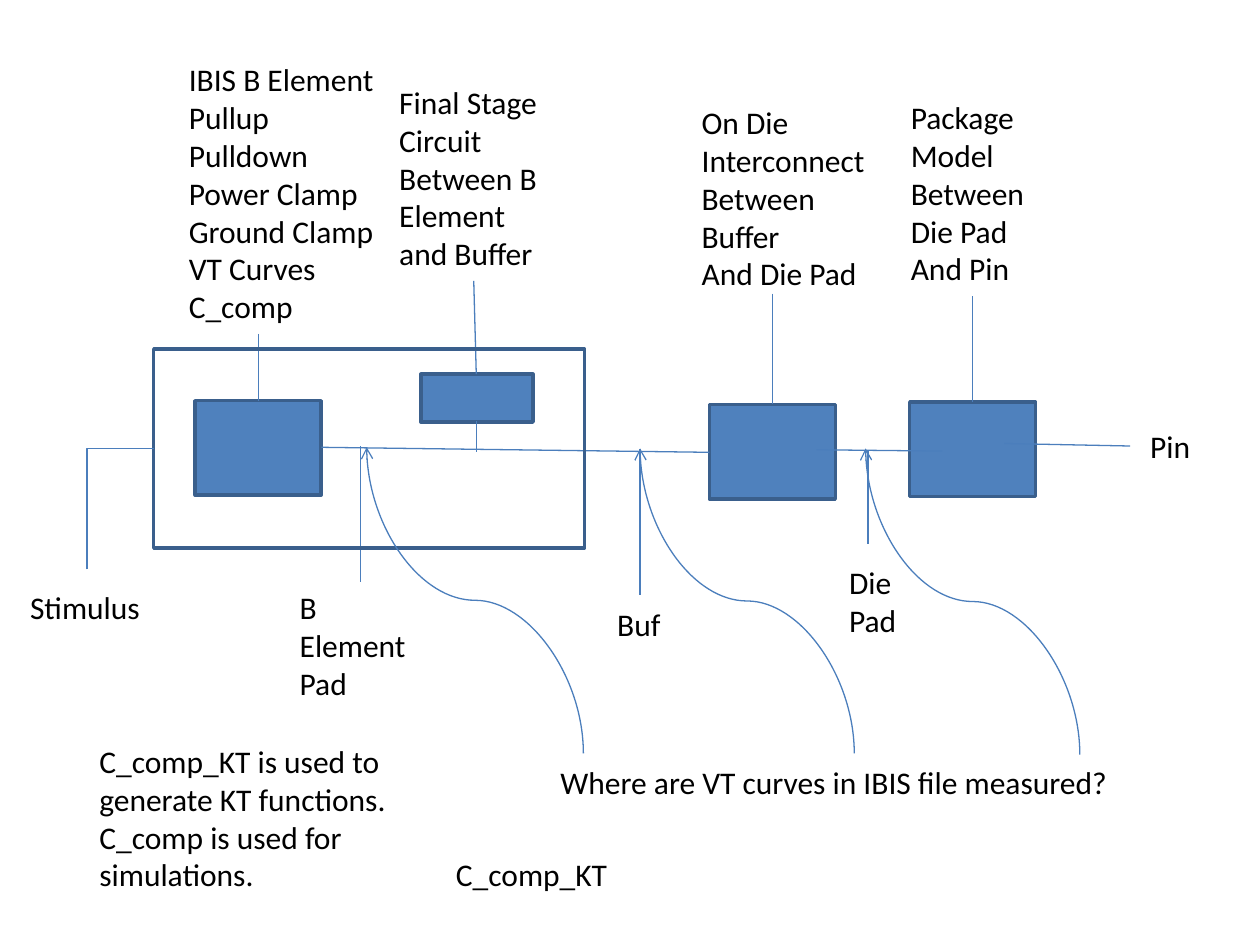
from typing import NamedTuple, Optional

import pptx
import pptx.dml.color
import pptx.enum.shapes
import pptx.enum.text
import pptx.oxml
import pptx.oxml.ns
import pptx.util

Connector = pptx.enum.shapes.MSO_CONNECTOR
COLUMNS, ROWS = 100, 75
FONT, TEXT, FILL, EDGE, WIRE = "Calibri", "000000", "4F81BD", "3A5F8C", "4B7EBC"

prs = pptx.Presentation()
prs.slide_width, prs.slide_height = pptx.util.Inches(10), pptx.util.Inches(7.5)
s = prs.slides.add_slide(prs.slide_layouts[6])


class Block(NamedTuple):
    x: float
    y: float
    w: float = 10
    h: float = 7.5
    fill: Optional[str] = FILL


class Label(NamedTuple):
    x: float
    y: float
    w: float
    h: float
    lines: list[str]
    wrap: bool = False


class Wire(NamedTuple):
    x1: float
    y1: float
    x2: float
    y2: float


def col(n: float) -> int:
    return round(prs.slide_width * n / COLUMNS)


def row(n: float) -> int:
    return round(prs.slide_height * n / ROWS)


def rgb(color: str) -> pptx.dml.color.RGBColor:
    return pptx.dml.color.RGBColor.from_string(color)


def draw_block(b: Block) -> None:
    sp = s.shapes.add_shape(pptx.enum.shapes.MSO_SHAPE.RECTANGLE,
                            col(b.x), row(b.y), col(b.w), row(b.h))
    sp.shadow.inherit = False
    if b.fill:
        sp.fill.solid()
        sp.fill.fore_color.rgb = rgb(b.fill)
    else:
        sp.fill.background()
    sp.line.color.rgb = rgb(EDGE)
    sp.line.width = pptx.util.Pt(2)


def add_text(p, text: str, *, size: float = 18, color: str = TEXT, font: str = FONT) -> None:
    r = p.add_run()
    r.text = text
    r.font.size, r.font.name = pptx.util.Pt(size), font
    r.font.color.rgb = rgb(color)


def draw_label(label: Label) -> None:
    sp = s.shapes.add_textbox(col(label.x), row(label.y), col(label.w), row(label.h))
    tf = sp.text_frame
    tf.word_wrap = label.wrap
    tf.auto_size = pptx.enum.text.MSO_AUTO_SIZE.SHAPE_TO_FIT_TEXT
    for i, line in enumerate(label.lines):
        add_text(tf.add_paragraph() if i else tf.paragraphs[0], line)


def draw_wire(w: Wire, kind=Connector.STRAIGHT, turn: int = 0,
              preset: str = "", arrow: bool = False) -> None:
    """Join two points; turn is 0, 90 or 270 degrees about the middle."""
    x1, y1, x2, y2 = col(w.x1), row(w.y1), col(w.x2), row(w.y2)
    if turn:
        # Ends before the turn is applied
        sign = 1 if turn == 90 else -1
        mx, my = (x1 + x2) // 2, (y1 + y2) // 2
        dx, dy = sign * (y1 - my), -sign * (x1 - mx)
        x1, y1, x2, y2 = mx + dx, my + dy, mx - dx, my - dy
    c = s.shapes.add_connector(kind, x1, y1, x2, y2)
    c.line.color.rgb = rgb(WIRE)
    c.line.width = pptx.util.Pt(0.75)
    sppr = c._element.spPr
    if turn:
        sppr.find(pptx.oxml.ns.qn("a:xfrm")).set("rot", str(turn * 60000))
    if preset:
        sppr.find(pptx.oxml.ns.qn("a:prstGeom")).set("prst", preset)
    ns = pptx.oxml.ns.nsdecls("a")
    if arrow:
        sppr.find(pptx.oxml.ns.qn("a:ln")).append(
            pptx.oxml.parse_xml(f'<a:tailEnd {ns} type="arrow"/>'))
    sppr.append(pptx.oxml.parse_xml(f"<a:effectLst {ns}/>"))


BLOCKS = [
    Block(15.5, 31.8),              # B element
    Block(33.4, 29.7, 8.9, 3.8),    # final stage
    Block(56.3, 32.1),              # on-die interconnect
    Block(72.2, 31.9),              # package
]
BUFFER = Block(12.2, 27.7, 34.2, 15.8, None)

LABELS = [
    # Parts, above the signal path
    Label(14, 4.3, 16.8, 22.2, ["IBIS B Element", "Pullup", "Pulldown", "Power Clamp",
                                "Ground Clamp", "VT Curves", "C_comp"]),
    Label(30.7, 6.1, 13.8, 16.2, ["Final Stage Circuit Between B Element and Buffer"], True),
    Label(54.7, 7.7, 15.1, 16.2, ["On Die", "Interconnect", "Between Buffer",
                                  "And Die Pad"], True),
    Label(71.3, 7.3, 11.8, 16.2, ["Package Model", "Between Die Pad", "And Pin"], True),
    # Nodes along the signal path
    Label(90.3, 33.4, 5.2, 4, ["Pin"]),
    Label(22.8, 46.2, 11.5, 10.1, ["B Element Pad"], True),
    Label(48, 47.5, 5.5, 4, ["Buf"]),
    Label(66.4, 44.2, 6.1, 7.1, ["Die Pad"], True),
    Label(1.4, 46.2, 10.8, 4, ["Stimulus"]),
    # Notes
    Label(43.5, 60.1, 46, 4, ["Where are VT curves in IBIS file measured?"]),
    Label(35.2, 67.4, 14.2, 4, ["C_comp_KT"]),
    Label(6.9, 58.4, 27.2, 13.1, ["C_comp_KT is used to generate KT functions.",
                                  "C_comp is used for simulations."], True),
]

WIRES = [
    # Part labels to blocks
    Wire(77.2, 23.5, 77.2, 31.9), Wire(61.3, 23.3, 61.3, 32.1),
    Wire(20.5, 26.5, 20.5, 31.8), Wire(37.6, 22.3, 37.8, 29.7),
    # Signal path
    Wire(25.5, 35.5, 56.3, 35.9), Wire(64.8, 35.7, 74.8, 35.8),
    Wire(79.7, 35.2, 89.7, 35.4), Wire(37.8, 33.4, 37.8, 35.9),
    # Signal path to node labels
    Wire(28.6, 35.4, 28.6, 46.2), Wire(50.8, 35.6, 50.8, 47.2),
    Wire(68.9, 35.8, 68.9, 43.2),
]
STIMULUS = Wire(6.9, 45.2, 12.2, 35.6)
QUESTION_ARROWS = [
    Wire(46.3, 59.8, 29.1, 35.5), Wire(67.8, 59.8, 50.8, 35.6),
    Wire(85.7, 59.9, 68.7, 35.6),
]

for block in BLOCKS:
    draw_block(block)
for label in LABELS:
    draw_label(label)
for wire in WIRES:
    draw_wire(wire)
draw_block(BUFFER)
for wire in QUESTION_ARROWS:
    draw_wire(wire, Connector.CURVE, turn=270, arrow=True)
draw_wire(STIMULUS, Connector.ELBOW, turn=90, preset="bentConnector2")

prs.save("out.pptx")
